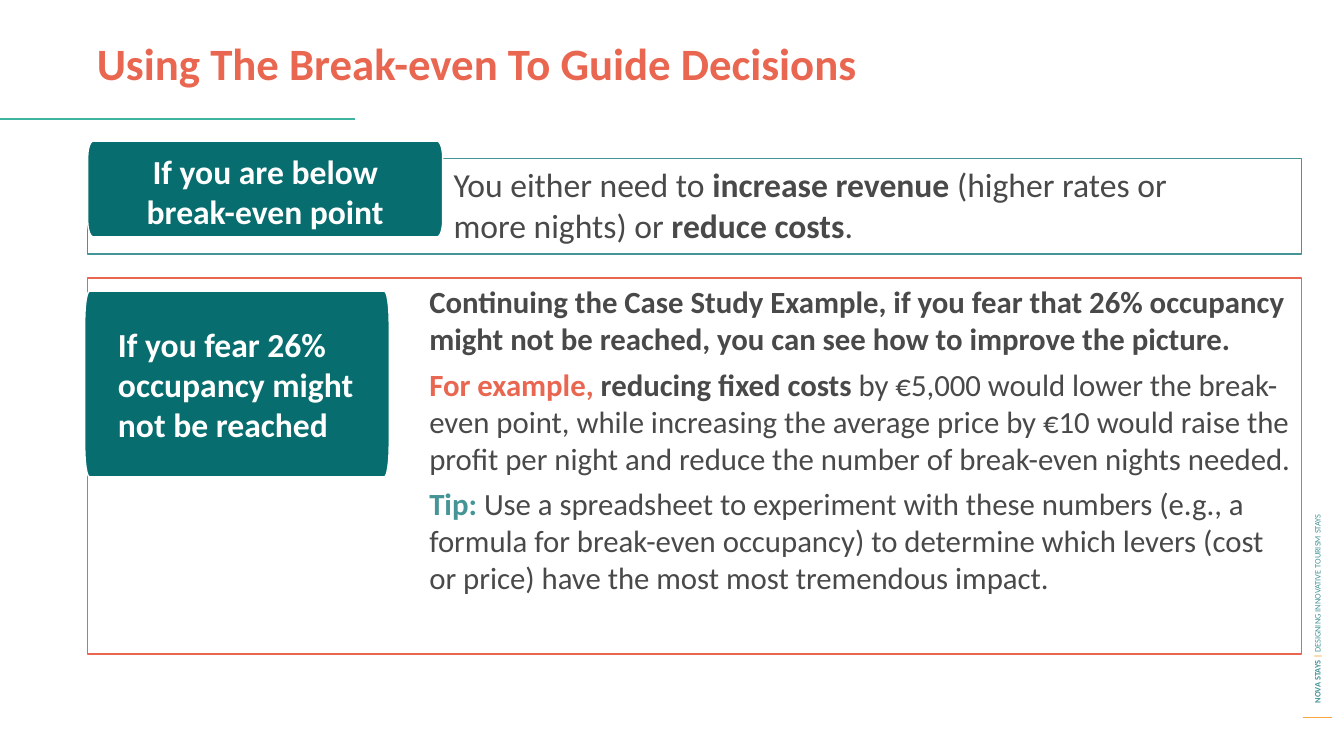
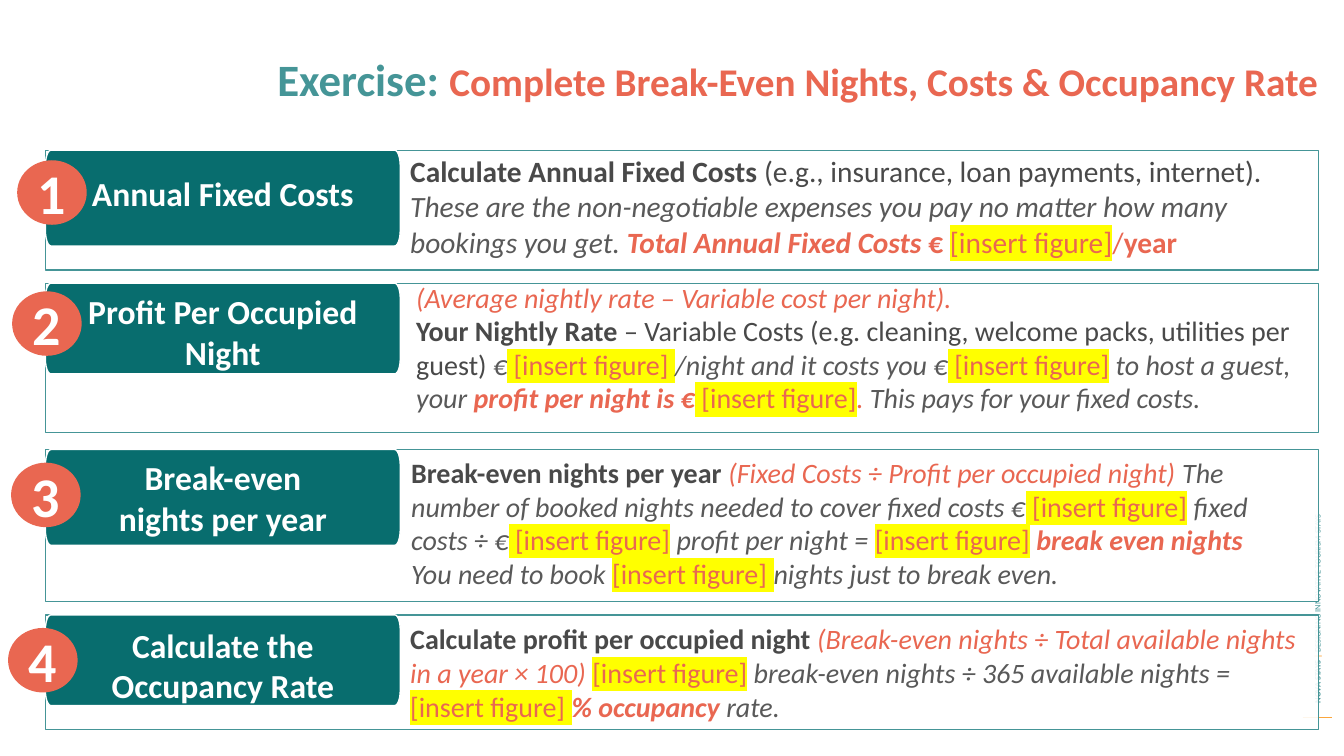
import math
from dataclasses import dataclass

from lxml import etree
from pptx import Presentation
from pptx.dml.color import RGBColor
from pptx.enum.shapes import MSO_CONNECTOR, MSO_SHAPE
from pptx.enum.text import MSO_ANCHOR, MSO_AUTO_SIZE, PP_ALIGN
from pptx.oxml.ns import qn
from pptx.util import Inches, Pt

CORAL = RGBColor(0xE9, 0x67, 0x51)
TEAL = RGBColor(0x45, 0x95, 0x97)
DEEP_TEAL = RGBColor(0x08, 0x6D, 0x6E)
MINT = RGBColor(0x3F, 0xB5, 0xA1)
AMBER = RGBColor(0xFB, 0xA6, 0x3D)
INK = RGBColor(0x49, 0x49, 0x49)
GREY = RGBColor(0x59, 0x59, 0x59)
WHITE = RGBColor(0xFF, 0xFF, 0xFF)
YELLOW = RGBColor(0xFF, 0xFF, 0x00)

RECTANGLE, OVAL = MSO_SHAPE.RECTANGLE, MSO_SHAPE.OVAL
STRAIGHT = MSO_CONNECTOR.STRAIGHT
LEFT, CENTER = PP_ALIGN.LEFT, PP_ALIGN.CENTER
TOP, MIDDLE = MSO_ANCHOR.TOP, MSO_ANCHOR.MIDDLE
NO_AUTOFIT = MSO_AUTO_SIZE.NONE

FONT = "Calibri"
TITLE_ONLY = 5


@dataclass(frozen=True)
class Style:
    color: RGBColor = INK
    bold: bool = False
    italic: bool = False
    marked: bool = False
    size: float = None


PLAIN = Style()
STRONG = Style(bold=True)
NOTE = Style(GREY, italic=True)
FORMULA = Style(CORAL, italic=True)
RESULT = Style(CORAL, bold=True, italic=True)
ACCENT = Style(CORAL, bold=True)
TEAL_ACCENT = Style(TEAL, bold=True)
BLANK = Style(CORAL, marked=True)
ON_DARK = Style(WHITE, bold=True)


class Deck:
    """Holds the presentation, its style and the slide being filled."""

    def __init__(self):
        self.presentation = Presentation()
        self.presentation.slide_width = Inches(13.33)
        self.presentation.slide_height = Inches(7.5)
        self.slide = None

    def new_slide(self, title_runs, left, top, width):
        layout = self.presentation.slide_layouts[TITLE_ONLY]
        self.slide = self.presentation.slides.add_slide(layout)
        title = self.slide.shapes.title
        title.left, title.top = Inches(left), Inches(top)
        title.width, title.height = Inches(width), Inches(0.88)
        self.set_text(title.text_frame, [title_runs], 32)
        self.side_footer()

    def side_footer(self):
        self.line(12.92, 13.21, 7.12, AMBER, 0.75)
        footer = self.text(10.18, 4.09, 5.77, 0.2, [[
            ("NOVA STAYS ", TEAL_ACCENT),
            ("| ", Style(AMBER, bold=True)),
            ("DESIGNING INNOVATIVE TOURISM STAYS", Style(TEAL)),
        ]], 6, anchor=MIDDLE)
        footer.rotation = 270

    def set_text(self, frame, paragraphs, size, align=LEFT, anchor=TOP, space_after=0):
        """Fill a frame with paragraphs, each a list of (text, Style) runs."""
        frame.word_wrap = True
        frame.auto_size = NO_AUTOFIT
        frame.vertical_anchor = anchor
        for index, runs in enumerate(paragraphs):
            paragraph = frame.add_paragraph() if index else frame.paragraphs[0]
            paragraph.alignment = align
            paragraph.space_after = Pt(space_after)
            paragraph.font.name = FONT
            paragraph.font.size = Pt(size)
            uniform = len({style for _, style in runs}) == 1
            if uniform:
                self.apply(paragraph.font, runs[0][1])
            for words, style in runs:
                run = paragraph.add_run()
                run.text = words
                if not uniform:
                    self.apply(run.font, style)
                if style.marked:
                    self.highlight(run)

    @staticmethod
    def apply(font, style):
        font.color.rgb = style.color
        font.bold = style.bold
        font.italic = style.italic
        if style.size:
            font.size = Pt(style.size)

    @staticmethod
    def highlight(run):
        marker = etree.Element(qn("a:highlight"))
        etree.SubElement(marker, qn("a:srgbClr"), val=str(YELLOW))
        run._r.get_or_add_rPr().find(qn("a:solidFill")).addnext(marker)

    def text(self, left, top, width, height, paragraphs, size, **layout):
        box = self.slide.shapes.add_textbox(
            Inches(left), Inches(top), Inches(width), Inches(height))
        self.set_text(box.text_frame, paragraphs, size, **layout)
        return box

    def line(self, start, end, top, color, weight):
        rule = self.slide.shapes.add_connector(
            STRAIGHT, Inches(start), Inches(top), Inches(end), Inches(top))
        rule.line.color.rgb = color
        rule.line.width = Pt(weight)
        etree.SubElement(rule._element.spPr, qn("a:effectLst"))

    def panel(self, left, top, width, height, border=TEAL):
        """Add an outlined box with a 90 % opaque white fill."""
        panel = self.slide.shapes.add_shape(
            RECTANGLE, Inches(left), Inches(top), Inches(width), Inches(height))
        panel.shadow.inherit = False
        panel.fill.solid()
        panel.fill.fore_color.rgb = WHITE
        white = panel._element.spPr.find(qn("a:solidFill"))[0]
        etree.SubElement(white, qn("a:alpha"), val="90000")
        panel.line.color.rgb = border
        panel.line.width = Pt(1)

    def label(self, left, top, width, height, lines, align=CENTER, inset=0.25, drop=0):
        """Add a tab with flattened elliptical corners; drop lowers its text."""
        radius_x, radius_y = width / 64, height / 6
        corners = [  # centre of each corner arc, clockwise, and its first angle
            (left + radius_x, top + radius_y, 180),
            (left + width - radius_x, top + radius_y, 270),
            (left + width - radius_x, top + height - radius_y, 0),
            (left + radius_x, top + height - radius_y, 90),
        ]
        outline = [
            (Inches(x + radius_x * math.cos(math.radians(first + step))),
             Inches(y + radius_y * math.sin(math.radians(first + step))))
            for x, y, first in corners for step in range(0, 91, 15)
        ]
        builder = self.slide.shapes.build_freeform(*outline[0])
        builder.add_line_segments(outline[1:], close=True)
        tab = builder.convert_to_shape()
        tab.shadow.inherit = False
        tab.fill.solid()
        tab.fill.fore_color.rgb = DEEP_TEAL
        tab.line.color.rgb = WHITE
        tab.line.width = Pt(1)
        frame = tab.text_frame
        frame.margin_left = frame.margin_right = Inches(inset)
        frame.margin_top = Inches(0.05 + drop)
        frame.margin_bottom = Inches(0.05 - drop)
        self.set_text(frame, [[(words, ON_DARK)] for words in lines], 24, align, MIDDLE)

    def badge(self, left, top, number):
        circle = self.slide.shapes.add_shape(
            OVAL, Inches(left), Inches(top), Inches(0.69), Inches(0.64))
        circle.shadow.inherit = False
        circle.fill.solid()
        circle.fill.fore_color.rgb = CORAL
        circle.line.fill.background()
        frame = circle.text_frame
        frame.margin_left = frame.margin_right = 0
        frame.margin_top = frame.margin_bottom = 0
        self.set_text(frame, [[(str(number), ON_DARK)]], 40, CENTER, MIDDLE)


@dataclass
class Step:
    """One exercise row; body and badge are (left, top) positions."""
    top: float
    height: float
    label_height: float
    label: list
    label_drop: float
    badge: tuple
    body: tuple
    size: int
    paragraphs: list


STEPS = [
    Step(1.49, 1.19, 0.95, ["Annual Fixed Costs"], -0.05, (0.17, 1.59), (3.97, 1.47), 21, [[
        ("Calculate Annual Fixed Costs ", STRONG),
        ("(e.g., insurance, loan payments, internet). ", PLAIN),
        ("These are the non-negotiable expenses you pay no matter how many "
         "bookings you get. ", NOTE),
        ("Total Annual Fixed Costs ", RESULT),
        ("€ ", ACCENT),
        ("[insert figure]", BLANK),
        ("/", Style(CORAL)),
        ("year", ACCENT),
    ]]),
    Step(2.81, 1.48, 0.9, ["Profit Per Occupied Night"], 0.03, (0.12, 2.89), (4.03, 2.73), 20, [
        [("(Average nightly rate – Variable cost per night).", FORMULA)],
        [
            ("Your Nightly Rate ", STRONG),
            ("– Variable Costs (e.g. cleaning, welcome packs, utilities per guest) ", PLAIN),
            ("€", NOTE),
            (" [insert figure] ", BLANK),
            ("/night and it costs you €", NOTE),
            (" [insert figure]", BLANK),
            (" to host a guest, your ", NOTE),
            ("profit per night is €", RESULT),
            (" [insert figure]", BLANK),
            (". ", FORMULA),
            ("This pays for your fixed costs.", NOTE),
        ],
    ]),
    Step(4.46, 1.51, 0.95, ["Break-even", "nights per year"], 0, (0.11, 4.59), (3.98, 4.47), 20, [
        [
            ("Break-even nights per year ", STRONG),
            ("(Fixed Costs ÷ Profit per occupied night) ", FORMULA),
            ("The number of booked nights needed to cover fixed costs €", NOTE),
            (" [insert figure]", BLANK),
            (" fixed costs ÷ €", NOTE),
            (" [insert figure]", BLANK),
            (" profit per night = ", NOTE),
            ("[insert figure]", BLANK),
            (" break even nights", RESULT),
        ],
        [
            ("You need to book ", NOTE),
            ("[insert figure] ", BLANK),
            ("nights just to break even.", NOTE),
        ],
    ]),
    Step(6.1, 1.14, 0.9, ["Calculate the Occupancy Rate"], 0.05, (0.08, 6.23), (3.97, 6.12), 20, [[
        ("Calculate profit per occupied night ", STRONG),
        ("(Break-even nights ÷ Total available nights in a year × 100) ", FORMULA),
        ("[insert figure]", BLANK),
        (" break-even nights ÷ 365 available nights = ", NOTE),
        ("[insert figure] ", BLANK),
        ("% occupancy ", RESULT),
        ("rate.", NOTE),
    ]]),
]


def add_decisions_slide(deck):
    deck.new_slide([("Using The Break-even To Guide Decisions", ACCENT)], 0.86, 0.3, 11.61)
    deck.line(0, 3.52, 1.18, MINT, 1.5)

    deck.panel(0.87, 1.57, 12.04, 0.95)
    deck.label(0.87, 1.4, 3.52, 0.95, ["If you are below break-even point"], drop=0.02)
    deck.text(4.4, 1.58, 8.06, 0.91, [[
        ("You either need to ", PLAIN),
        ("increase revenue", STRONG),
        (" (higher rates or more nights) or ", PLAIN),
        ("reduce costs", STRONG),
        (".", PLAIN),
    ]], 24)

    deck.panel(0.87, 2.76, 12.04, 3.73, CORAL)
    deck.label(0.84, 2.89, 3.02, 1.84, ["If you fear 26% occupancy might not be reached"],
               align=LEFT, inset=0.33)
    deck.text(4.16, 2.76, 8.76, 3.6, [
        [("Continuing the Case Study Example, if you fear that 26% occupancy might not be "
          "reached, you can see how to improve the picture.", STRONG)],
        [("For example, ", ACCENT),
         ("reducing fixed costs ", STRONG),
         ("by €5,000 would lower the break-even point, while increasing the average price "
          "by €10 would raise the profit per night and reduce the number of break-even "
          "nights needed.", PLAIN)],
        [("Tip: ", TEAL_ACCENT),
         ("Use a spreadsheet to experiment with these numbers (e.g., a formula for "
          "break-even occupancy) to determine which levers (cost or price) have the most "
          "most tremendous impact.", PLAIN)],
    ], 22, space_after=6)


def add_exercise_slide(deck):
    deck.new_slide([
        ("Exercise: ", TEAL_ACCENT),
        ("Complete Break-Even Nights, Costs & Occupancy Rate", Style(CORAL, bold=True, size=28)),
    ], 2.65, 0.46, 10.68)
    for number, step in enumerate(STEPS, start=1):
        deck.panel(0.45, step.top, 12.63, step.height)
        deck.label(0.45, step.top, 3.52, step.label_height, step.label, drop=step.label_drop)
        deck.text(*step.body, 13.08 - step.body[0], step.height, step.paragraphs, step.size)
        deck.badge(*step.badge, number)


def main():
    deck = Deck()
    add_decisions_slide(deck)
    add_exercise_slide(deck)
    deck.presentation.save("out.pptx")


if __name__ == "__main__":
    main()
